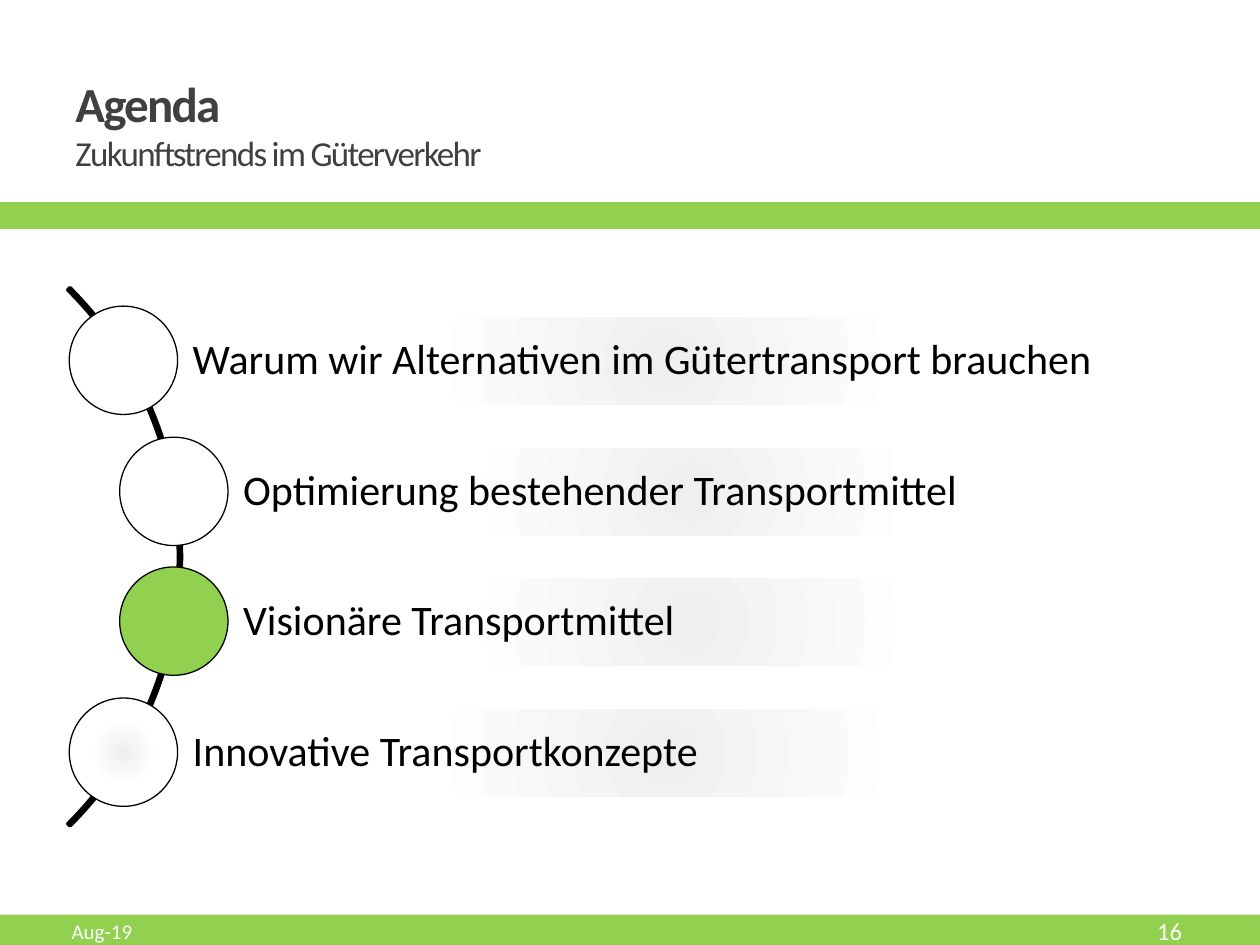
from dataclasses import dataclass

from lxml.etree import SubElement
from pptx import Presentation
from pptx.dml.color import RGBColor
from pptx.enum.shapes import MSO_SHAPE as Shape
from pptx.enum.text import MSO_ANCHOR as Anchor, PP_ALIGN as Align
from pptx.oxml.ns import qn
from pptx.util import Pt

PX = 9144


@dataclass(frozen=True)
class Theme:
    font: str = "Calibri"
    green: str = "92D050"
    white: str = "FFFFFF"
    glow: str = "EFEFEF"
    ink: str = "000000"
    grey: str = "404040"
    title: int = 28
    subtitle: int = 20
    item: int = 24
    number: int = 14
    date: int = 12


class Deck:
    def __init__(self, theme):
        self.theme = theme
        self.prs = Presentation()
        self.prs.slide_width, self.prs.slide_height = 1000 * PX, 750 * PX
        self.s = self.prs.slides.add_slide(self.prs.slide_layouts[6])

    def shape(self, kind, box, fill=None, line=None, width=0.75):
        sp = self.s.shapes.add_shape(kind, *(v * PX for v in box))
        sp.shadow.inherit = False
        if fill:
            sp.fill.solid()
            sp.fill.fore_color.rgb = RGBColor.from_string(fill)
        else:
            self.radial(sp)
        if line:
            sp.line.color.rgb = RGBColor.from_string(line)
            sp.line.width = Pt(width)
        else:
            sp.line.fill.background()
        return sp

    def radial(self, sp):
        sp.fill.gradient()
        grad = sp._element.spPr.find(qn("a:gradFill"))
        for child in list(grad):
            grad.remove(child)
        stops = SubElement(grad, qn("a:gsLst"))
        t = self.theme
        for pos, color in ((0, t.glow), (45, t.white), (100, t.white)):
            gs = SubElement(stops, qn("a:gs"), pos=str(pos * 1000))
            SubElement(gs, qn("a:srgbClr"), val=color)
        path = SubElement(grad, qn("a:path"), path="circle")
        SubElement(path, qn("a:fillToRect"), dict.fromkeys("ltrb", "100000"))

    def style(self, font, size, color, bold=False):
        font.name = self.theme.font
        font.size = Pt(size)
        font.bold = bold
        font.color.rgb = RGBColor.from_string(color)

    def frame(self, sp):
        tf = sp.text_frame
        tf.word_wrap = True
        tf.vertical_anchor = Anchor.MIDDLE
        return tf

    def textbox(self, box):
        return self.frame(self.s.shapes.add_textbox(*(v * PX for v in box)))

    def label(self, box, text, size, align=Align.LEFT):
        p = self.textbox(box).paragraphs[0]
        p.text = text
        p.alignment = align
        self.style(p.font, size, self.theme.white)

    def title(self, box, head, sub):
        t = self.theme
        p = self.textbox(box).paragraphs[0]
        for text, size, bold in ((head, t.title, True), (sub, t.subtitle, False)):
            if p.runs:
                p.add_line_break()
            r = p.add_run()
            r.text = text
            self.style(r.font, size, t.grey, bold)
            r.font._element.set("spc", "-100")

    def arc(self, box, start, end, thickness):
        ink = self.theme.ink
        sp = self.shape(Shape.BLOCK_ARC, box, ink, ink, 2.08)
        for i, value in enumerate((start, end, thickness)):
            sp.adjustments[i] = value

    def item(self, left, top, text, marker):
        t = self.theme
        tf = self.frame(self.shape(Shape.RECTANGLE, (left, top, 958 - left, 69)))
        tf.margin_left = 55 * PX
        tf.margin_top = tf.margin_right = tf.margin_bottom = 7 * PX
        p = tf.paragraphs[0]
        p.text = text
        p.alignment = Align.LEFT
        p.line_spacing = 0.9
        self.style(p.font, t.item, t.ink)
        self.shape(Shape.OVAL, (left - 43, top - 9, 86, 86), marker, t.ink)


def main():
    t = Theme()
    deck = Deck(t)
    deck.shape(Shape.RECTANGLE, (0, 726, 1000, 24), t.green)
    deck.shape(Shape.RECTANGLE, (0, 162, 1000, 18), t.green, t.green, 2.08)
    deck.title((50, 44, 521, 108), "Agenda", "Zukunftstrends im Güterverkehr")
    deck.label((831, 721, 117, 36), "16", t.number, Align.RIGHT)
    deck.arc((-460, 140, 604, 604), 189, 27, 0.004)
    items = (
        (98, "Warum wir Alternativen im Gütertransport brauchen", t.white),
        (138, "Optimierung bestehender Transportmittel", t.white),
        (138, "Visionäre Transportmittel", t.green),
        (98, "Innovative Transportkonzepte", None),
    )
    for i, (left, text, marker) in enumerate(items):
        deck.item(left, 252 + round(i * 103.67), text, marker)
    deck.label((47, 721, 317, 36), "Aug-19", t.date)
    deck.prs.save("out.pptx")


if __name__ == "__main__":
    main()
